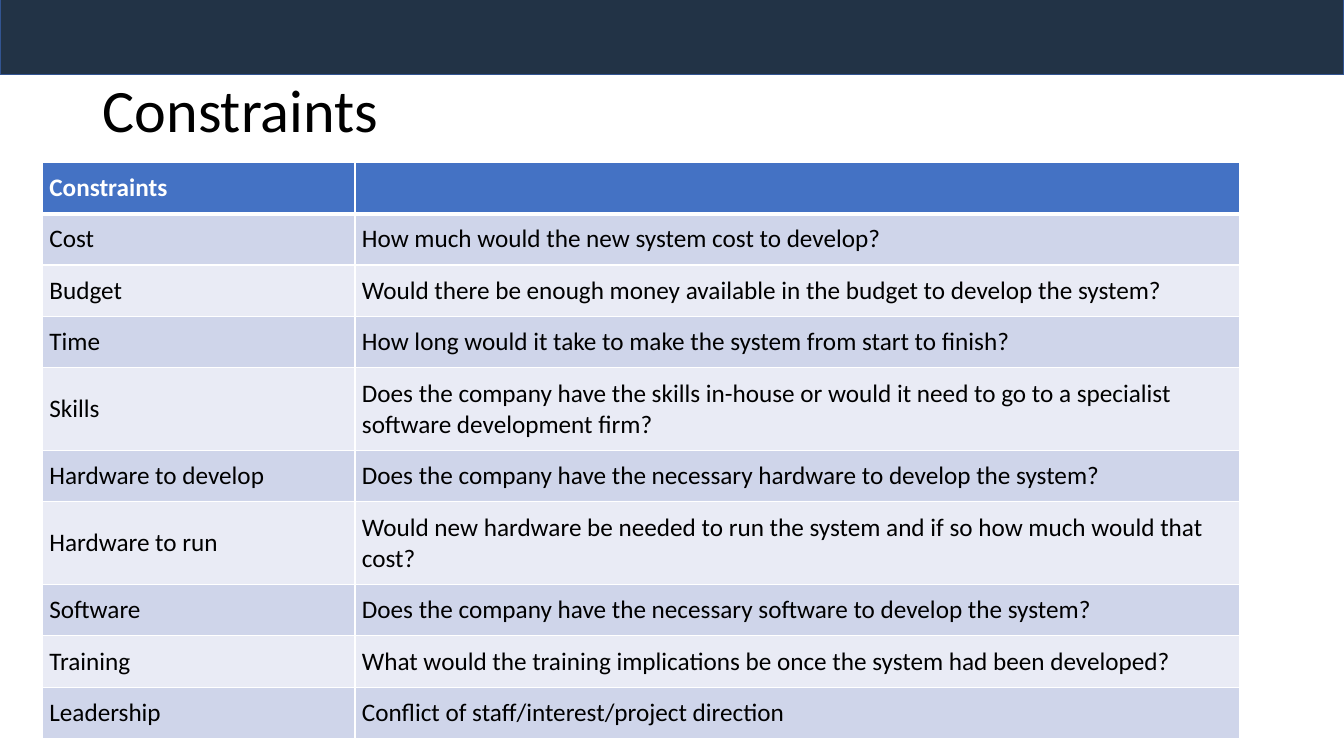
import pptx
import pptx.util
import pptx.dml.color
import pptx.enum.shapes
import pptx.enum.text
import pptx.oxml.ns
from lxml import etree

EMU_PER_PX = 9144  # 100 px to the inch
COLORS = {
    "banner": "223346", "banner_line": "325491", "black": "000000", "white": "FFFFFF",
    "header": "4472C4", "band_dark": "CFD5EA", "band_light": "E9EBF5",
}
FONT = "Calibri"
ROWS = [
    ("Constraints", ""),
    ("Cost", "How much would the new system cost to develop?"),
    ("Budget", "Would there be enough money available in the budget to develop the system?"),
    ("Time", "How long would it take to make the system from start to finish?"),
    ("Skills", "Does the company have the skills in-house or would it need to go to a "
               "specialist software development firm?"),
    ("Hardware to develop", "Does the company have the necessary hardware to develop the system?"),
    ("Hardware to run", "Would new hardware be needed to run the system and if so how much "
                        "would that cost?"),
    ("Software", "Does the company have the necessary software to develop the system?"),
    ("Training", "What would the training implications be once the system had been developed?"),
    ("Leadership", "Conflict of staff/interest/project direction"),
]
TWO_LINE_ROWS = {"Skills", "Hardware to run"}
ROW_HEIGHT, TWO_LINE_HEIGHT = 51, 82
COLUMN_WIDTHS = [310, 877]


def px(*lengths):
    return [pptx.util.Emu(length * EMU_PER_PX) for length in lengths]


def rgb(name):
    return pptx.dml.color.RGBColor.from_string(COLORS[name])


deck = pptx.Presentation()
deck.slide_width, deck.slide_height = px(1333, 750)
page = deck.slides.add_slide(deck.slide_layouts[6])

banner = page.shapes.add_shape(pptx.enum.shapes.MSO_SHAPE.RECTANGLE, *px(0, -4, 1333, 78))
banner.shadow.inherit = False
banner.fill.solid()
banner.fill.fore_color.rgb = rgb("banner")
banner.line.color.rgb = rgb("banner_line")
banner.line.width = pptx.util.Pt(1)

title = page.shapes.add_textbox(*px(92, 40, 1150, 145)).text_frame
title.word_wrap = True
title.vertical_anchor = pptx.enum.text.MSO_ANCHOR.MIDDLE
para = title.paragraphs[0]
para.text = "Constraints"
para.line_spacing = 0.9
para.font.name = FONT
para.font.size = pptx.util.Pt(43)
para.font.color.rgb = rgb("black")

heights = [TWO_LINE_HEIGHT if name in TWO_LINE_ROWS else ROW_HEIGHT for name, _ in ROWS]
table = page.shapes.add_table(
    len(ROWS), len(COLUMN_WIDTHS), *px(42, 161, sum(COLUMN_WIDTHS), sum(heights))).table
for column, width in zip(table.columns, px(*COLUMN_WIDTHS)):
    column.width = width

for index, (row, height, texts) in enumerate(zip(table.rows, px(*heights), ROWS)):
    row.height = height
    is_header = index == 0
    fill = "header" if is_header else ("band_dark" if index % 2 else "band_light")
    for cell, text in zip(row.cells, texts):
        cell.vertical_anchor = pptx.enum.text.MSO_ANCHOR.MIDDLE
        cell.margin_left, cell.margin_top, cell.margin_right, cell.margin_bottom = px(7, 10, 7, 10)

        properties = cell._tc.get_or_add_tcPr()
        for side in ("lnL", "lnR", "lnT", "lnB"):
            thick = (is_header and side == "lnB") or (index == 1 and side == "lnT")
            border = etree.SubElement(properties, pptx.oxml.ns.qn(f"a:{side}"),
                                      w=str(pptx.util.Pt(3 if thick else 1)))
            solid = etree.SubElement(border, pptx.oxml.ns.qn("a:solidFill"))
            etree.SubElement(solid, pptx.oxml.ns.qn("a:srgbClr"), val=COLORS["white"])
        cell.fill.solid()
        cell.fill.fore_color.rgb = rgb(fill)

        para = cell.text_frame.paragraphs[0]
        para.text = text
        para.font.name = FONT
        para.font.size = pptx.util.Pt(18)
        para.font.bold = is_header
        para.font.color.rgb = rgb("white" if is_header else "black")

deck.save("out.pptx")
